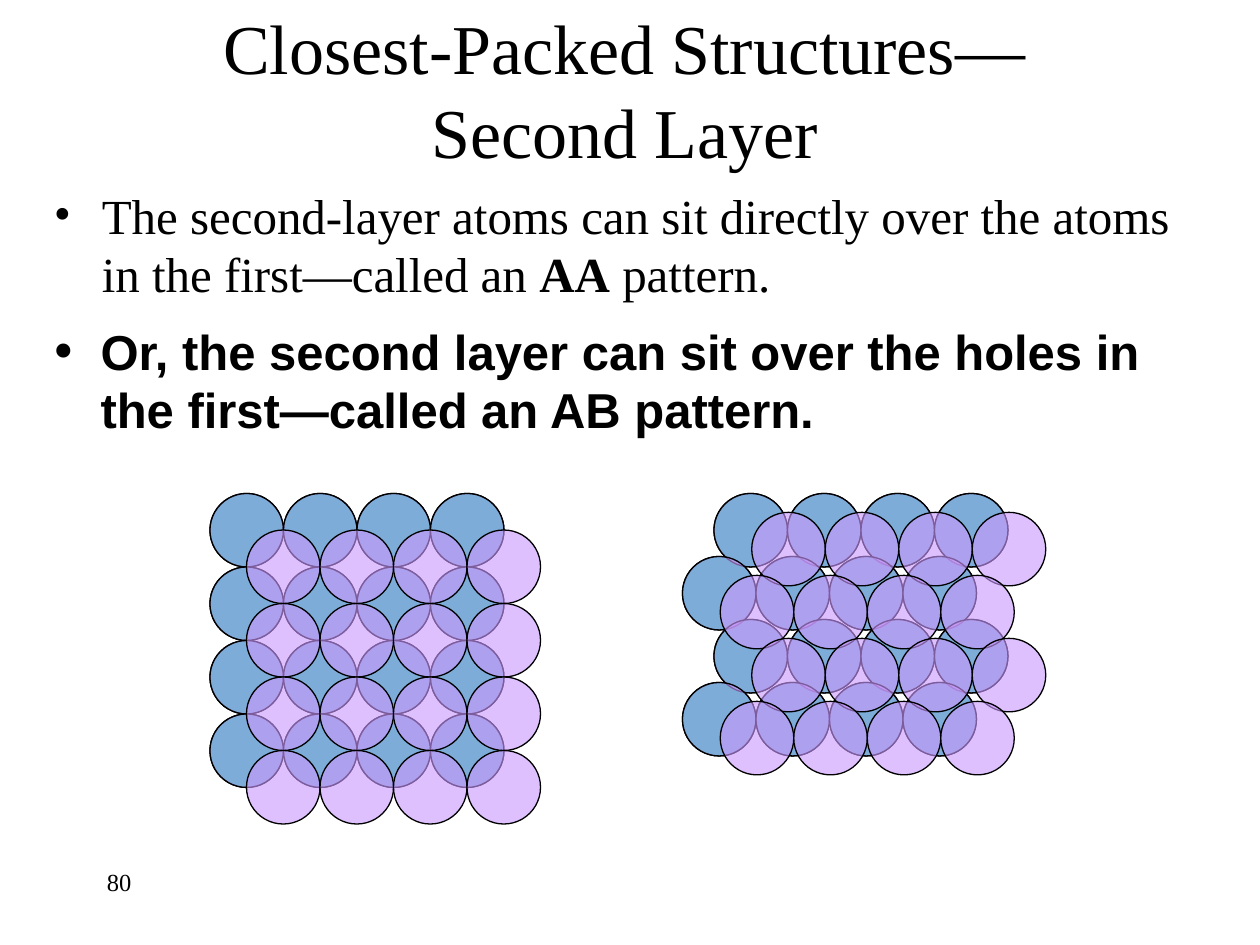
from itertools import product
from lxml.etree import SubElement
from pptx import Presentation
from pptx.dml.color import RGBColor
from pptx.enum.shapes import MSO_SHAPE as Shape
from pptx.enum.text import MSO_ANCHOR as Anchor, PP_ALIGN as Align
from pptx.oxml.ns import qn
from pptx.util import Inches, Pt

SERIF, SANS = "Times New Roman", "Arial"
BLACK, GREEN, PURPLE = "000000", "00CC99", "CC99FF"

TITLE = [("Closest-Packed Structures—\vSecond Layer", False)]
AA_PATTERN = [
    ("The second-layer atoms can sit directly over the atoms in the first—called an ", False),
    ("AA", True),
    (" pattern.", False),
]
AB_PATTERN = [("Or, the second layer can sit over the holes in the first—called an AB pattern.", True)]
PAGE_NUMBER = [("80", False)]

UNIT = 1 / 12
ATOM = 7 * UNIT
ATOMS_PER_SIDE = 4
TOP = 47 * UNIT
SQUARE = dict(left=20 * UNIT, row_pitch=ATOM, row_shift=0)
HEXAGONAL = dict(left=68 * UNIT, row_pitch=6 * UNIT, row_shift=-3 * UNIT)
LAYERS = [
    (SQUARE, (0, 0), GREEN, 100),
    (HEXAGONAL, (0, 0), GREEN, 100),
    (SQUARE, (0, 0), PURPLE, 61),
    (HEXAGONAL, (0, 0), PURPLE, 61),
    (SQUARE, (0.29, 0.29), PURPLE, 61),
    (HEXAGONAL, (0.3, 0.15), PURPLE, 61),
]


def color(value):
    return RGBColor.from_string(value)


def add_text(slide, box, runs, font, size):
    frame = slide.shapes.add_textbox(*map(Inches, box)).text_frame
    frame.word_wrap = True
    paragraph = frame.paragraphs[0]
    paragraph.text = runs[0][0]
    for text, _ in runs[1:]:
        paragraph.add_run().text = text
    bold_flags = [runs[0][1]] * (len(paragraph.runs) - len(runs)) + [bold for _, bold in runs]
    for run, bold in zip(paragraph.runs, bold_flags):
        run.font.name, run.font.size, run.font.bold = font, Pt(size), bold
        run.font.color.rgb = color(BLACK)
    return frame


def add_bullet(paragraph, indent, size_percent):
    properties = paragraph._p.get_or_add_pPr()
    properties.set("marL", str(Inches(indent)))
    properties.set("indent", str(-Inches(indent)))
    SubElement(properties, qn("a:buSzPct")).set("val", str(size_percent * 1000))
    SubElement(properties, qn("a:buFont")).set("typeface", SERIF)
    SubElement(properties, qn("a:buChar")).set("char", "•")


def add_layer(slide, packing, offset, fill, opacity):
    group = slide.shapes.add_group_shape()
    for row, column in product(range(ATOMS_PER_SIDE), repeat=2):
        left = packing["left"] + offset[0] + column * ATOM + row % 2 * packing["row_shift"]
        top = TOP + offset[1] + row * packing["row_pitch"]
        atom = group.shapes.add_shape(Shape.OVAL, *map(Inches, (left, top, ATOM, ATOM)))
        atom.shadow.inherit = False
        atom.fill.solid()
        atom.fill.fore_color.rgb = color(fill)
        atom.line.color.rgb = color(BLACK)
        atom.line.width = Pt(0.75)
        if opacity < 100:
            fill_color = atom._element.spPr.find(qn("a:solidFill"))[0]
            SubElement(fill_color, qn("a:alpha")).set("val", str(opacity * 1000))


def main():
    presentation = Presentation()
    presentation.slide_width, presentation.slide_height = Inches(10), Inches(7.5)
    slide = presentation.slides.add_slide(presentation.slide_layouts[6])

    add_text(slide, (0.75, 6.83, 2.08, 0.5), PAGE_NUMBER, SERIF, 14)
    title = add_text(slide, (0.33, 0.08, 9.25, 1.25), TITLE, SERIF, 40)
    title.vertical_anchor = Anchor.MIDDLE
    title.paragraphs[0].alignment = Align.CENTER
    first = add_text(slide, (0.33, 1.42, 9.25, 1.17), AA_PATTERN, SERIF, 28)
    add_bullet(first.paragraphs[0], 0.38, 100)
    second = add_text(slide, (0.33, 2.5, 9.18, 1.04), AB_PATTERN, SANS, 28)
    add_bullet(second.paragraphs[0], 0.37, 120)

    for layer in LAYERS:
        add_layer(slide, *layer)

    presentation.save("out.pptx")


if __name__ == "__main__":
    main()
